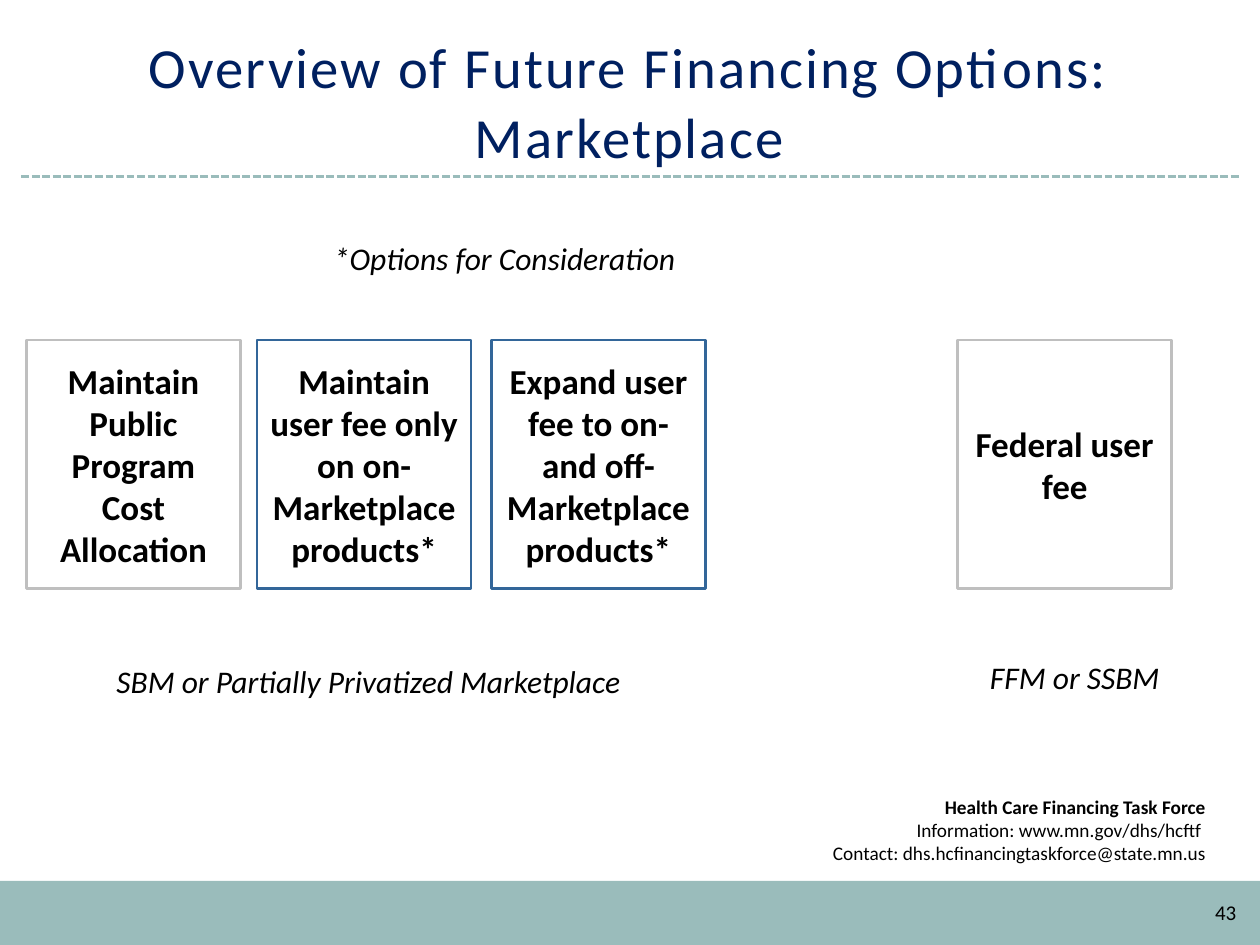
import pptx
import pptx.util
import pptx.dml.color
import pptx.enum.dml
import pptx.enum.shapes
import pptx.enum.text
import pptx.oxml.ns
from lxml import etree

Inches = pptx.util.Inches
Pt = pptx.util.Pt
RGB = pptx.dml.color.RGBColor.from_string
ALIGN = pptx.enum.text.PP_ALIGN
ANCHOR = pptx.enum.text.MSO_ANCHOR
SHAPE = pptx.enum.shapes.MSO_SHAPE
qn = pptx.oxml.ns.qn

theme = {
    "font": "Calibri",
    "teal": RGB("9ABCBB"), "navy": RGB("002060"), "black": RGB("000000"),
    "white": RGB("FFFFFF"), "grey": RGB("BFBFBF"), "blue": RGB("336699"),
    "title": Pt(32.4), "option": Pt(20), "caption": Pt(18),
    "number": Pt(12), "contact": Pt(11),
}


def add_panel(left, top, width, height, fill, outline=None):
    panel = slide.shapes.add_shape(
        SHAPE.RECTANGLE, Inches(left), Inches(top), Inches(width), Inches(height))
    panel.shadow.inherit = False
    panel.fill.solid()
    panel.fill.fore_color.rgb = fill
    if outline is None:
        panel.line.fill.background()
    else:
        panel.line.color.rgb = outline
        panel.line.width = Pt(1.5)
    return panel


def write(holder, lines, size, align, anchor, color="black", **styles):
    frame = holder.text_frame
    frame.word_wrap = True
    frame.vertical_anchor = anchor
    for index, line in enumerate(lines):
        paragraph = frame.paragraphs[0] if index == 0 else frame.add_paragraph()
        paragraph.alignment = align
        run = paragraph.add_run()
        run.text = line
        run.font.color.rgb = theme[color]
        formats = {"name": theme["font"], "size": theme[size], **styles}
        for attribute, value in formats.items():
            setattr(run.font, attribute, value)
    return frame


deck = pptx.Presentation()
deck.slide_width, deck.slide_height = Inches(10), Inches(7.5)
slide = deck.slides.add_slide(deck.slide_layouts[6])

add_panel(0, 6.99, 10, 0.51, theme["teal"])

divider = slide.shapes.add_connector(
    pptx.enum.shapes.MSO_CONNECTOR.STRAIGHT,
    Inches(0.17), Inches(1.4), Inches(9.83), Inches(1.4))
divider.line.color.rgb = theme["teal"]
divider.line.width = Pt(1.5)
divider.line.dash_style = pptx.enum.dml.MSO_LINE.SQUARE_DOT
etree.SubElement(divider.line._get_or_add_ln().getparent(), qn("a:effectLst"))

contact = add_panel(4.54, 6.26, 5.13, 0.67, theme["white"])
contact_text = write(
    contact,
    ["Health Care Financing Task Force",
     "Information: www.mn.gov/dhs/hcftf ",
     "Contact: dhs.hcfinancingtaskforce@state.mn.us"],
    "contact", ALIGN.RIGHT, ANCHOR.TOP)
contact_text.paragraphs[0].runs[0].font.bold = True

title = slide.shapes.add_textbox(Inches(0.33), Inches(0.25), Inches(9.33), Inches(1.15))
title_text = write(title, ["Overview of Future Financing Options: Marketplace"],
                   "title", ALIGN.CENTER, ANCHOR.BOTTOM, "navy")
title_text.paragraphs[0].line_spacing = Pt(40)
title_text.paragraphs[0].runs[0].font._element.set("spc", "120")

options = [
    (0.21, "grey", "Maintain Public Program Cost Allocation"),
    (2.04, "blue", "Maintain user fee only on on-Marketplace products*"),
    (3.9, "blue", "Expand user fee to on- and off-Marketplace products*"),
    (7.6, "grey", "Federal user fee"),
]
for left, outline, option in options:
    card = add_panel(left, 2.7, 1.7, 1.97, theme["white"], theme[outline])
    tint = card.fill._xPr.find(qn("a:solidFill"))[0]
    etree.SubElement(tint, qn("a:alpha"), val="30000")
    write(card, [option], "option", ALIGN.CENTER, ANCHOR.MIDDLE, bold=True)

captions = [
    (1.6, 1.8, 4.81, "*Options for Consideration"),
    (0.52, 5.15, 4.81, "SBM or Partially Privatized Marketplace"),
    (7.49, 5.12, 2.08, "FFM or SSBM"),
]
for left, top, width, caption in captions:
    label = slide.shapes.add_textbox(Inches(left), Inches(top), Inches(width), Inches(0.45))
    write(label, [caption], "caption", ALIGN.CENTER, ANCHOR.BOTTOM, italic=True)

page_number = slide.shapes.add_textbox(Inches(9.33), Inches(7.04), Inches(0.58), Inches(0.4))
write(page_number, ["43"], "number", ALIGN.RIGHT, ANCHOR.MIDDLE)

deck.save("out.pptx")
